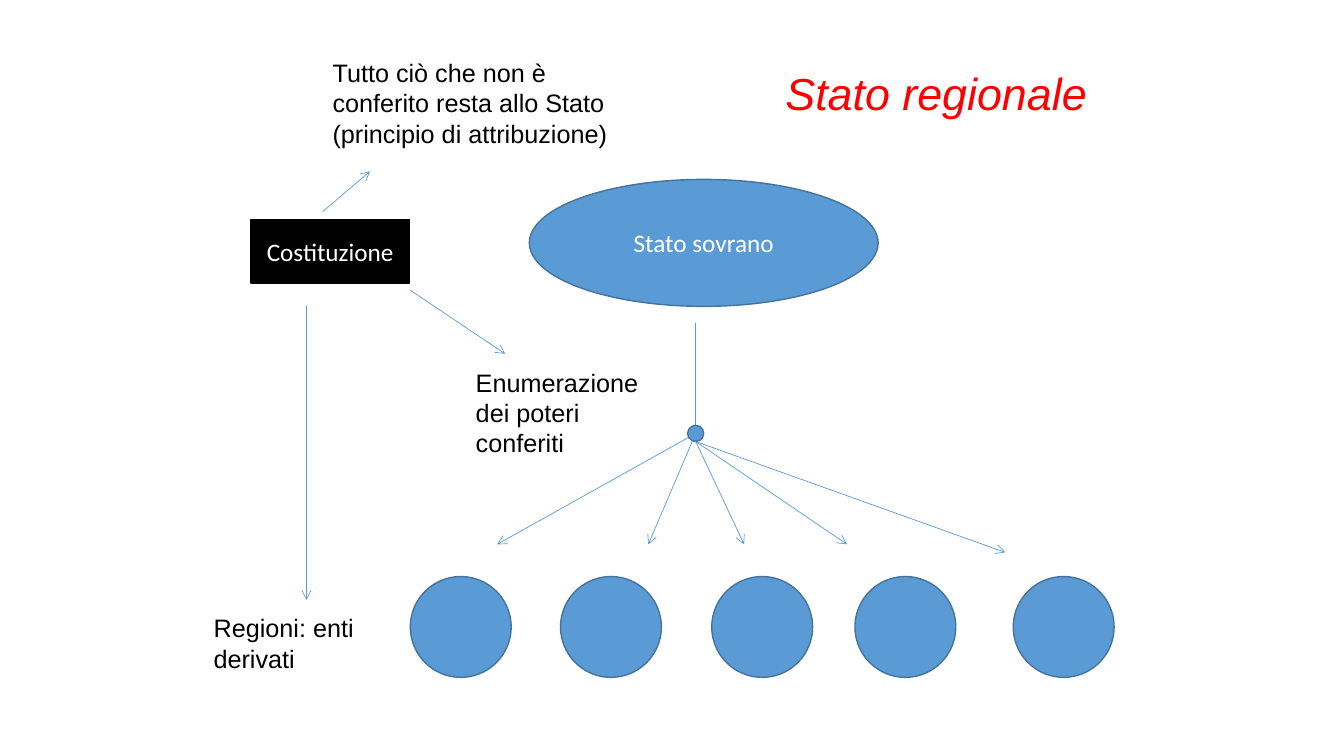
from lxml.etree import SubElement
from pptx import Presentation
from pptx.dml.color import RGBColor
from pptx.enum.shapes import MSO_CONNECTOR, MSO_SHAPE
from pptx.enum.text import MSO_ANCHOR as ANCHOR, MSO_AUTO_SIZE as FIT, PP_ALIGN as ALIGN
from pptx.oxml.ns import qn
from pptx.util import Emu, Pt

PX = 9144
COLORS = {
    "blue": "5B9BD5",
    "edge": "43739E",
    "black": "000000",
    "white": "FFFFFF",
    "red": "FF0000",
}


def px(*values):
    return [Emu(v * PX) for v in values]


def rgb(name):
    return RGBColor.from_string(COLORS[name])


class Diagram:
    def __init__(self, prs):
        self.slide = prs.slides.add_slide(prs.slide_layouts[5])
        self.shapes = self.slide.shapes

    def add_text(self, tf, text, size=18, font="Arial", color="black",
                 align=ALIGN.LEFT, anchor=ANCHOR.TOP, italic=False):
        tf.word_wrap = True
        tf.vertical_anchor = anchor
        p = tf.paragraphs[0]
        p.alignment = align
        r = p.add_run()
        r.text = text
        r.font.size = Pt(size)
        r.font.name = font
        r.font.italic = italic
        r.font.color.rgb = rgb(color)

    def title(self, text, left, top, width, height):
        sp = self.shapes.title
        sp.left, sp.top, sp.width, sp.height = px(left, top, width, height)
        sp.text_frame.auto_size = FIT.NONE
        self.add_text(sp.text_frame, text, size=32, color="red", italic=True)

    def label(self, text, *box):
        tf = self.shapes.add_textbox(*px(*box)).text_frame
        tf.auto_size = FIT.SHAPE_TO_FIT_TEXT
        self.add_text(tf, text)

    def shape(self, kind, *box, fill="blue", edge="edge", text=None):
        sp = self.shapes.add_shape(kind, *px(*box))
        sp.shadow.inherit = False
        sp.fill.solid()
        sp.fill.fore_color.rgb = rgb(fill)
        sp.line.color.rgb = rgb(edge)
        sp.line.width = Pt(1)
        if text:
            self.add_text(sp.text_frame, text, font="Calibri", color="white",
                          align=ALIGN.CENTER, anchor=ANCHOR.MIDDLE)

    def line(self, start, end, arrow=True):
        cxn = self.shapes.add_connector(MSO_CONNECTOR.STRAIGHT, *px(*start, *end))
        cxn.line.color.rgb = rgb("blue")
        cxn.line.width = Pt(0.5)
        sp_pr = cxn._element.spPr
        if arrow:
            SubElement(sp_pr.find(qn("a:ln")), qn("a:tailEnd"), type="arrow")
        SubElement(sp_pr, qn("a:effectLst"))


def main():
    prs = Presentation()
    prs.slide_width, prs.slide_height = px(1333, 750)
    d = Diagram(prs)

    d.title("Stato regionale", 769, 60, 354, 64)

    for left in (407, 556, 706, 848, 1005):
        d.shape(MSO_SHAPE.OVAL, left, 572, 100, 100)
    d.shape(MSO_SHAPE.OVAL, 525, 178, 346, 126, text="Stato sovrano")
    d.shape(MSO_SHAPE.RECTANGLE, 249, 218, 157, 63,
            fill="black", edge="black", text="Costituzione")

    d.label("Regioni: enti derivati", 202, 603, 165, 71)
    d.label("Enumerazione dei poteri conferiti", 462, 359, 212, 101)
    d.label("Tutto ciò che non è conferito resta allo Stato "
            "(principio di attribuzione)", 320, 52, 331, 101)

    d.line((304, 304), (304, 595))
    d.line((320, 210), (367, 170))
    d.line((407, 288), (501, 351))

    node, node_bottom = (690, 430), (690, 438)
    d.line((690, 320), node, arrow=False)
    for end in ((493, 540), (643, 540)):
        d.line(node, end)
    for end in ((738, 540), (840, 540), (997, 548)):
        d.line(node_bottom, end)
    d.shape(MSO_SHAPE.OVAL, 682, 422, 16, 16)

    prs.save("out.pptx")


if __name__ == "__main__":
    main()
